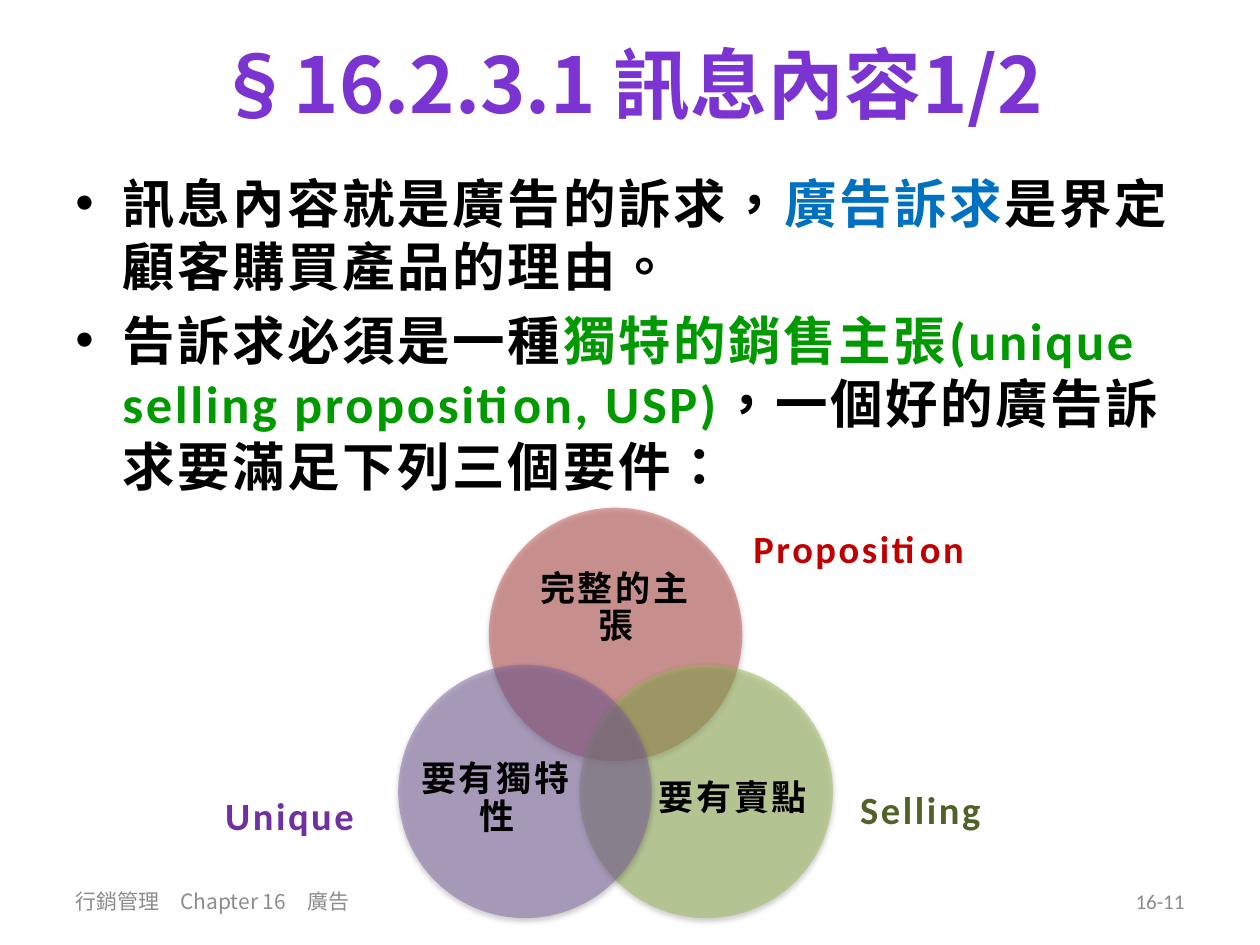
from dataclasses import dataclass
from math import cos, radians, sin

from lxml.etree import SubElement
from pptx import Presentation
from pptx.dml.color import RGBColor
from pptx.enum.shapes import MSO_SHAPE as Preset
from pptx.enum.text import MSO_ANCHOR as Anchor, MSO_AUTO_SIZE as AutoSize, PP_ALIGN as Align
from pptx.oxml.ns import qn
from pptx.util import Cm, Pt

LATIN, CJK = "Calibri", "Noto Sans CJK SC"
BLACK = RGBColor(0x00, 0x00, 0x00)
GRAY = RGBColor(0x8C, 0x8C, 0x8C)
TITLE_PURPLE = RGBColor(0x7B, 0x34, 0xD2)
BLUE = RGBColor(0x00, 0x70, 0xC0)
GREEN = RGBColor(0x00, 0x99, 0x00)
RED = RGBColor(0xC0, 0x00, 0x00)
OLIVE = RGBColor(0x4F, 0x62, 0x28)
PURPLE = RGBColor(0x70, 0x30, 0xA0)
CIRCLE_RED = RGBColor(0xC0, 0x50, 0x4D)
CIRCLE_GREEN = RGBColor(0x9B, 0xBB, 0x59)
CIRCLE_PURPLE = RGBColor(0x80, 0x64, 0xA2)

TITLE_FONT = {"name": CJK, "size": Pt(44), "bold": True}
BODY_FONT = {"name": LATIN, "size": Pt(30), "bold": True}
CIRCLE_FONT = {"name": LATIN, "size": Pt(20), "bold": True}
LABEL_FONT = {"name": LATIN, "size": Pt(22), "bold": True}
FOOTER_FONT = {"name": CJK, "size": Pt(12)}
NUMBER_FONT = {"name": LATIN, "size": Pt(12)}

Box = tuple[float, float, float, float]  # left, top, width, height in cm


@dataclass
class Circle:
    text: str
    fill: RGBColor
    angle: float  # direction from the centre of the diagram, in degrees
    text_box: Box  # measured from the circle's top left corner


@dataclass
class Label:
    text: str
    color: RGBColor
    box: Box


VENN_CENTER = (12.41, 14.9)
VENN_RADIUS = 2.11
DIAMETER = 5.11
CIRCLES = [
    Circle("完整的主張", CIRCLE_RED, -90, (0.69, 0.89, 3.73, 2.29)),
    Circle("要有賣點", CIRCLE_GREEN, 30, (1.57, 1.32, 3.05, 2.79)),
    Circle("要有獨特性", CIRCLE_PURPLE, 150, (0.46, 1.32, 3.05, 2.79)),
]
LABELS = [
    Label("Proposition", RED, (14.94, 10.46, 5.36, 1.19)),
    Label("Selling", OLIVE, (17.09, 15.72, 5.36, 1.19)),
    Label("Unique", PURPLE, (4.29, 15.85, 3.56, 1.19)),
]
BULLETS = [
    [("訊息內容就是廣告的訴求，", BLACK), ("廣告訴求", BLUE),
     ("是界定顧客購買產品的理由。", BLACK)],
    [("告訴求必須是一種", BLACK),
     ("獨特的銷售主張(unique selling proposition, USP)", GREEN),
     ("，一個好的廣告訴求要滿足下列三個要件：", BLACK)],
]


def add_run(paragraph, text: str, color: RGBColor, font_format: dict, spacing: float = 0) -> None:
    """Add a run with its letter spacing in points."""
    run = paragraph.add_run()
    run.text = text
    for attribute, value in font_format.items():
        setattr(run.font, attribute, value)
    run.font.color.rgb = color
    properties = run.font._element
    properties.set("lang", "zh-TW")
    if spacing:
        properties.set("spc", str(round(spacing * 100)))
    SubElement(properties, qn("a:ea"), typeface=CJK)


def add_frame(slide, box: Box, anchor: Anchor = Anchor.TOP):
    frame = slide.shapes.add_textbox(*map(Cm, box)).text_frame
    frame.word_wrap = True
    frame.vertical_anchor = anchor
    return frame


def add_title(slide) -> None:
    title = slide.shapes.title
    title.left, title.top, title.width, title.height = map(Cm, (1.27, 0, 22.86, 3.33))
    title.text_frame.vertical_anchor = Anchor.MIDDLE
    paragraph = title.text_frame.paragraphs[0]
    paragraph.alignment = Align.CENTER
    add_run(paragraph, "§16.2.3.1 訊息內容1/2", TITLE_PURPLE, TITLE_FONT)


def add_bullets(slide) -> None:
    frame = add_frame(slide, (1.27, 3.33, 22.86, 11))
    for index, runs in enumerate(BULLETS):
        paragraph = frame.add_paragraph() if index else frame.paragraphs[0]
        properties = paragraph._p.get_or_add_pPr()
        properties.set("marL", str(Cm(0.95)))
        properties.set("indent", str(-Cm(0.95)))
        SubElement(properties, qn("a:buFont"), typeface="Arial")
        SubElement(properties, qn("a:buChar"), char="•")
        if index:
            paragraph.space_before = Pt(6)
        for text, color in runs:
            add_run(paragraph, text, color, BODY_FONT, 1.5)


def add_circle(slide, circle: Circle) -> None:
    """Draw a half-transparent circle with a soft shadow, and its caption."""
    angle = radians(circle.angle)
    left = VENN_CENTER[0] + VENN_RADIUS * cos(angle) - DIAMETER / 2
    top = VENN_CENTER[1] + VENN_RADIUS * sin(angle) - DIAMETER / 2
    disc = slide.shapes.add_shape(Preset.OVAL, *map(Cm, (left, top, DIAMETER, DIAMETER)))
    disc.fill.solid()
    disc.fill.fore_color.rgb = circle.fill
    disc.line.fill.background()
    disc.shadow.inherit = False
    properties = disc._element.spPr
    fill_color = properties.find(qn("a:solidFill")).find(qn("a:srgbClr"))
    SubElement(fill_color, qn("a:alpha"), val="50000")
    shadow = SubElement(properties.find(qn("a:effectLst")), qn("a:outerShdw"),
                        blurRad=str(Pt(3.1)), dist=str(Pt(1.6)), dir="5400000", rotWithShape="0")
    shadow_color = SubElement(shadow, qn("a:srgbClr"), val="000000")
    SubElement(shadow_color, qn("a:alpha"), val="38000")

    dx, dy, width, height = circle.text_box
    frame = add_frame(slide, (left + dx, top + dy, width, height), Anchor.MIDDLE)
    for side in ("left", "top", "right", "bottom"):
        setattr(frame, f"margin_{side}", 0)
    paragraph = frame.paragraphs[0]
    paragraph.alignment = Align.CENTER
    paragraph.line_spacing = 0.9
    add_run(paragraph, circle.text, BLACK, CIRCLE_FONT, 1.5)


def add_label(slide, label: Label) -> None:
    frame = add_frame(slide, label.box)
    frame.auto_size = AutoSize.SHAPE_TO_FIT_TEXT
    add_run(frame.paragraphs[0], label.text, label.color, LABEL_FONT, 1.5)


def add_footer(slide) -> None:
    footer = add_frame(slide, (1.27, 17.65, 6.22, 1.02), Anchor.MIDDLE)
    add_run(footer.paragraphs[0], "行銷管理　Chapter 16　廣告", GRAY, FOOTER_FONT)
    number = add_frame(slide, (18.21, 17.65, 5.92, 1.02), Anchor.MIDDLE).paragraphs[0]
    number.alignment = Align.RIGHT
    add_run(number, "16-11", GRAY, NUMBER_FONT)


def main() -> None:
    presentation = Presentation()
    presentation.slide_width, presentation.slide_height = Cm(25.4), Cm(19.05)
    slide = presentation.slides.add_slide(presentation.slide_layouts[5])
    add_title(slide)
    add_bullets(slide)
    add_footer(slide)
    for circle in CIRCLES:
        add_circle(slide, circle)
    for label in LABELS:
        add_label(slide, label)
    presentation.save("out.pptx")


if __name__ == "__main__":
    main()
